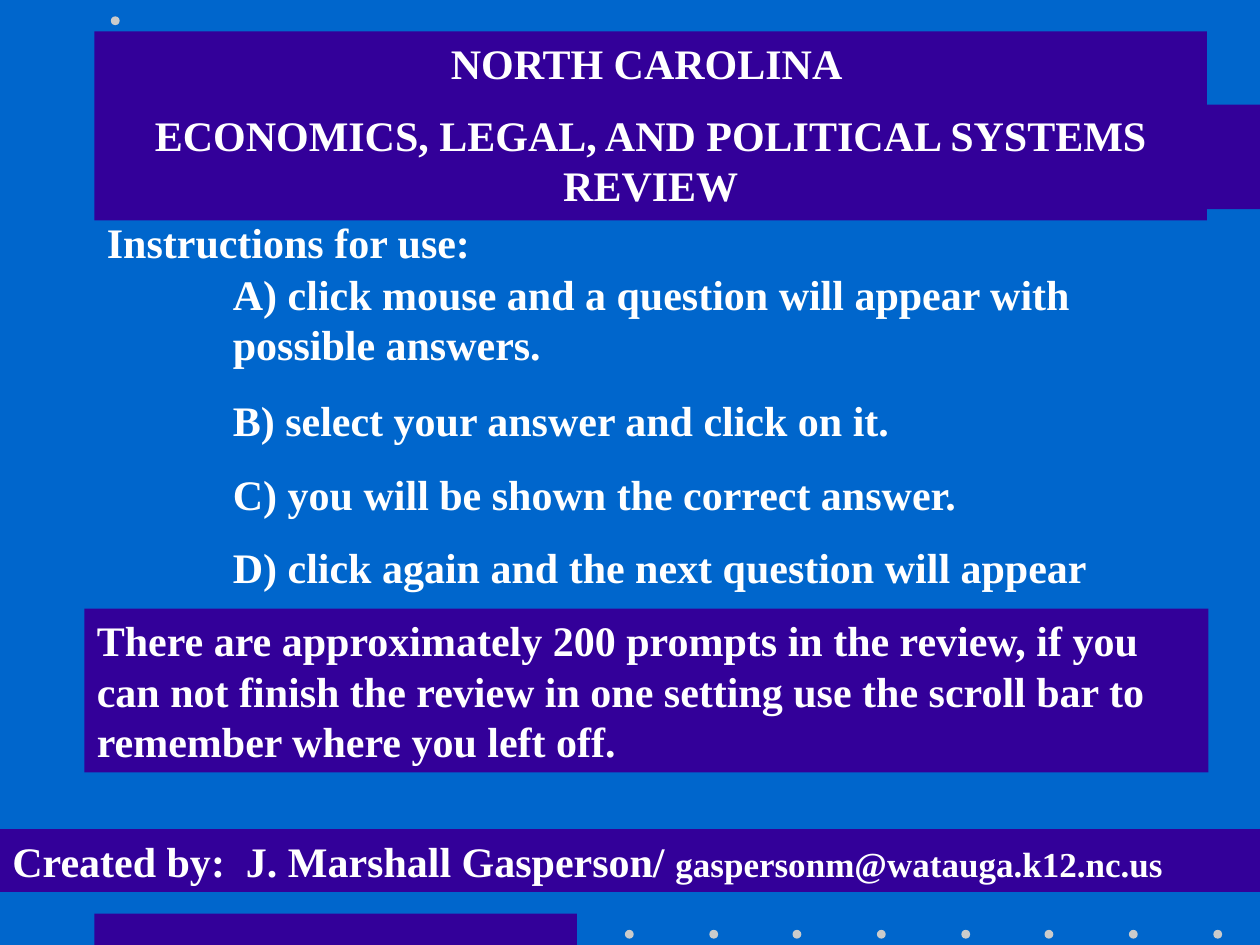
from pptx import Presentation
from pptx.dml.color import RGBColor
from pptx.enum.shapes import MSO_SHAPE as Shape
from pptx.enum.text import MSO_ANCHOR as Anchor, PP_ALIGN as Align
from pptx.util import Inches, Pt

BLUE = RGBColor(0x00, 0x66, 0xCC)
PURPLE = RGBColor(0x33, 0x00, 0x99)
GREY = RGBColor(0xCB, 0xCB, 0xCB)
WHITE = RGBColor(0xFF, 0xFF, 0xFF)

DOT_SIZE = 0.07
STEPS = [
    (2.08, 7.58, 0.9, "A) click mouse and a question will appear with possible answers."),
    (3.08, 7.67, 0.5, "B) select your answer and click on it."),
    (3.67, 7.08, 0.5, "C) you will be shown the correct answer."),
    (4.25, 7.33, 0.5, "D) click again and the next question will appear"),
]


class SlideBuilder:
    font = "Times New Roman"
    size = Pt(24)

    def __init__(self, page):
        self.page = page
        page.background.fill.solid()
        page.background.fill.fore_color.rgb = BLUE

    def shape(self, kind, color, left, top, width, height):
        shape = self.page.shapes.add_shape(
            kind, Inches(left), Inches(top), Inches(width), Inches(height))
        shape.shadow.inherit = False
        shape.fill.solid()
        shape.fill.fore_color.rgb = color
        shape.line.fill.background()
        return shape

    def dot(self, left, top):
        return self.shape(Shape.OVAL, GREY, left, top, DOT_SIZE, DOT_SIZE)

    def band(self, left, top, width, height, *lines, align=Align.LEFT):
        box = self.shape(Shape.RECTANGLE, PURPLE, left, top, width, height)
        self.set_lines(box, lines, align)
        return box

    def text(self, left, top, width, height, *lines):
        box = self.page.shapes.add_textbox(
            Inches(left), Inches(top), Inches(width), Inches(height))
        self.set_lines(box, lines, Align.LEFT)
        return box

    def set_lines(self, box, lines, align):
        frame = box.text_frame
        frame.word_wrap = True
        frame.vertical_anchor = Anchor.TOP
        for index, line in enumerate(lines):
            para = frame.add_paragraph() if index else frame.paragraphs[0]
            para.text = line
            para.alignment = align
            para.space_before = Pt(12 if index else 0)
            para.font.name = self.font
            para.font.size = self.size
            para.font.bold = True
            para.font.color.rgb = WHITE


def main():
    deck = Presentation()
    deck.slide_width, deck.slide_height = Inches(10), Inches(7.5)
    builder = SlideBuilder(deck.slides.add_slide(deck.slide_layouts[6]))

    builder.band(0.75, 7.25, 3.83, 0.25)
    for column in range(8):
        builder.dot(round(4.96 + column * 2 / 3, 2), 7.38)
    builder.band(0.83, 0.83, 9.17, 0.83)
    builder.dot(0.88, 0.13)

    builder.band(0.75, 0.25, 8.83, 1.5, "NORTH CAROLINA ",
                 "ECONOMICS, LEGAL, AND POLITICAL SYSTEMS REVIEW",
                 align=Align.CENTER)
    builder.text(0.75, 1.67, 3.17, 0.5, "Instructions for use:")
    for top, width, height, step in STEPS:
        builder.text(1.75, top, width, height, step)
    builder.band(0.67, 4.83, 8.92, 1.3,
                 "There are approximately 200 prompts in the review, if you can not "
                 "finish the review in one setting use the scroll bar to remember "
                 "where you left off.")
    credit = builder.band(0, 6.58, 10, 0.5, "Created by:  J. Marshall Gasperson/ ")
    address = credit.text_frame.paragraphs[0].add_run()
    address.text = "gaspersonm@watauga.k12.nc.us"
    address.font.size = Pt(20)

    deck.save("out.pptx")


if __name__ == "__main__":
    main()
